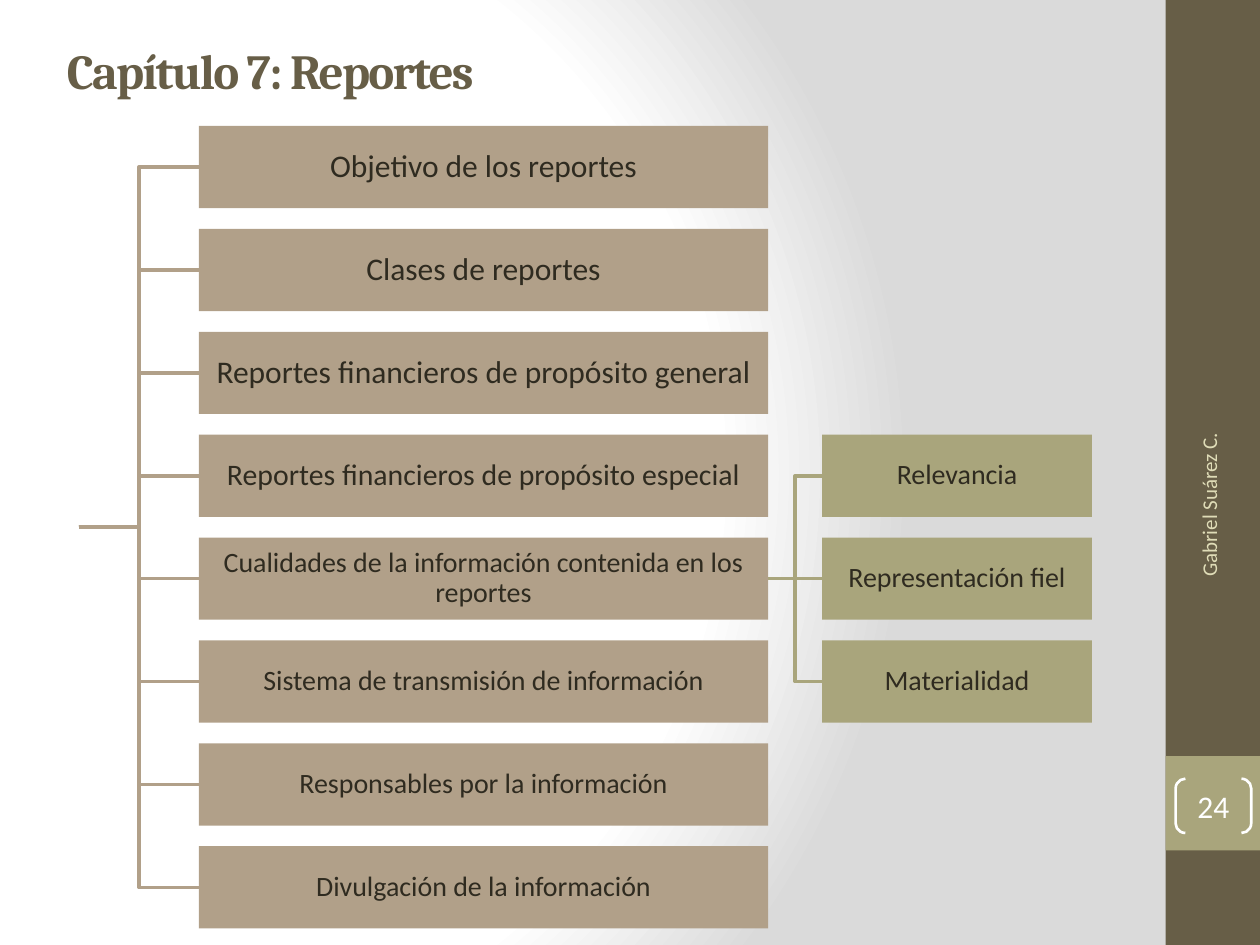
from pptx import Presentation
from pptx.dml.color import RGBColor
from pptx.enum.shapes import MSO_CONNECTOR as CONN, MSO_SHAPE as SHAPE
from pptx.enum.text import MSO_ANCHOR as ANCHOR, PP_ALIGN as ALIGN
from pptx.oxml import parse_xml
from pptx.oxml.ns import nsdecls
from pptx.util import Pt

COLORS = {
    "olive": "675E47", "sage": "A9A57C", "taupe": "B1A089", "dark": "2F2B20",
    "cream": "DFDCB7", "white": "FFFFFF", "gray": "DADADA",
}
TOPICS = [
    ("Objetivo de los reportes", 18),
    ("Clases de reportes", 18),
    ("Reportes financieros de propósito general", 18),
    ("Reportes financieros de propósito especial", 17),
    ("Cualidades de la información contenida en los reportes", 16),
    ("Sistema de transmisión de información", 16),
    ("Responsables por la información", 16),
    ("Divulgación de la información", 16),
]
QUALITIES = ["Relevancia", "Representación fiel", "Materialidad"]
PARENT = 4
ROW_H, PITCH = 47, 58.8


def rgb(name):
    return RGBColor.from_string(COLORS[name])


def set_text(sp, text, size, color, align=ALIGN.CENTER, inset=None, font="Calibri", bold=False):
    tf = sp.text_frame
    tf.word_wrap = True
    tf.vertical_anchor = ANCHOR.MIDDLE
    if inset is not None:
        for side in ("left", "top", "right", "bottom"):
            setattr(tf, f"margin_{side}", Pt(inset))
    p = tf.paragraphs[0]
    p.alignment = align
    r = p.add_run()
    r.text = text
    for key, value in {"name": font, "size": Pt(size), "bold": bold}.items():
        setattr(r.font, key, value)
    r.font.color.rgb = rgb(color)
    return p


def add_box(slide, x, y, w, h, fill):
    sp = slide.shapes.add_shape(SHAPE.RECTANGLE, Pt(x), Pt(y), Pt(w), Pt(h))
    sp.shadow.inherit = False
    sp.fill.solid()
    sp.fill.fore_color.rgb = rgb(fill)
    sp.line.fill.background()
    return sp


def set_line(sp, color, width=2):
    sp.line.color.rgb = rgb(color)
    sp.line.width = Pt(width)


def add_elbow(slide, x1, y1, x2, y2, color):
    mid = (x1 + x2) / 2
    fb = slide.shapes.build_freeform(Pt(x1), Pt(y1))
    points = [(mid, y1), (mid, y2), (x2, y2)]
    fb.add_line_segments([(Pt(x), Pt(y)) for x, y in points], close=False)
    sp = fb.convert_to_shape()
    sp.shadow.inherit = False
    sp.fill.background()
    set_line(sp, color)


def add_straight(slide, start, end, color):
    sp = slide.shapes.add_connector(CONN.STRAIGHT, 0, 0, 0, 0)
    sp.begin_connect(start, 3)
    sp.end_connect(end, 1)
    set_line(sp, color)
    sp._element.spPr.append(parse_xml(f"<a:effectLst {nsdecls('a')}/>"))


def add_column(slide, x, y, w, items, fill):
    boxes = []
    for i, (text, size) in enumerate(items):
        sp = add_box(slide, x, y + i * PITCH, w, ROW_H, fill)
        p = set_text(sp, text, size, "dark", inset=0.8)
        p.line_spacing = 0.9
        boxes.append(sp)
    return boxes


def add_tree(slide, x, y, w, h):
    topic_x, topic_w = x + 68.6, 325.4
    quality_x, quality_w = x + w - 154.2, 154.2
    root_y = y + h / 2
    centers = [y + ROW_H / 2 + i * PITCH for i in range(len(TOPICS))]
    for cy in centers:
        add_elbow(slide, x, root_y, topic_x, cy, "taupe")
    for cy in (centers[PARENT - 1], centers[PARENT + 1]):
        add_elbow(slide, topic_x + topic_w, centers[PARENT], quality_x, cy, "sage")
    topics = add_column(slide, topic_x, y, topic_w, TOPICS, "taupe")
    qualities = add_column(slide, quality_x, y + (PARENT - 1) * PITCH, quality_w,
                           [(text, 16) for text in QUALITIES], "sage")
    add_straight(slide, topics[PARENT], qualities[1], "sage")


def add_sidebar(slide, x, y, w, h):
    add_box(slide, x, y, w, h, "olive")
    add_box(slide, x, y + 432, w, w, "sage")

    author_w, author_h = 186.4, 28.8
    author = slide.shapes.add_textbox(Pt(x + 24.8 - author_w / 2), Pt(y + 333.4 - author_h / 2),
                                      Pt(author_w), Pt(author_h))
    author.rotation = 270
    set_text(author, "Gabriel Suárez C.", 12, "cream", ALIGN.RIGHT)

    number = slide.shapes.add_shape(SHAPE.DOUBLE_BRACKET, Pt(x + 5.8), Pt(y + 445),
                                    Pt(43.2), Pt(31))
    number.adjustments[0] = 0.18
    number.shadow.inherit = False
    number.fill.background()
    set_line(number, "white", 1.5)
    set_text(number, "24", 18, "white", inset=0)


def add_title(slide, x, y, w, h):
    sp = slide.shapes.title
    for key, value in {"left": x, "top": y, "width": w, "height": h}.items():
        setattr(sp, key, Pt(value))
    p = set_text(sp, "Capítulo 7: Reportes", 28, "olive", ALIGN.LEFT, font="Cambria", bold=True)
    p.runs[0].font._element.set("spc", "-100")


def set_background(slide):
    stops = "".join(
        f'<a:gs pos="{pos * 1000}"><a:srgbClr val="{COLORS[color]}"/></a:gs>'
        for pos, color in [(0, "white"), (75, "white"), (100, "gray")])
    slide._element.cSld.insert(0, parse_xml(
        f'<p:bg {nsdecls("p", "a")}><p:bgPr><a:gradFill rotWithShape="1">'
        f'<a:gsLst>{stops}</a:gsLst><a:path path="circle">'
        '<a:fillToRect l="20000" t="50000" r="100000" b="50000"/></a:path>'
        '</a:gradFill><a:effectLst/></p:bgPr></p:bg>'))


def main():
    prs = Presentation()
    prs.slide_width, prs.slide_height = Pt(720), Pt(540)
    slide = prs.slides.add_slide(prs.slide_layouts[5])
    set_background(slide)
    add_sidebar(slide, 666, 0, 54, 540)
    add_title(slide, 31, 9.4, 600, 61.2)
    add_tree(slide, 45, 72, 579, (len(TOPICS) - 1) * PITCH + ROW_H)
    prs.save("out.pptx")


if __name__ == "__main__":
    main()
